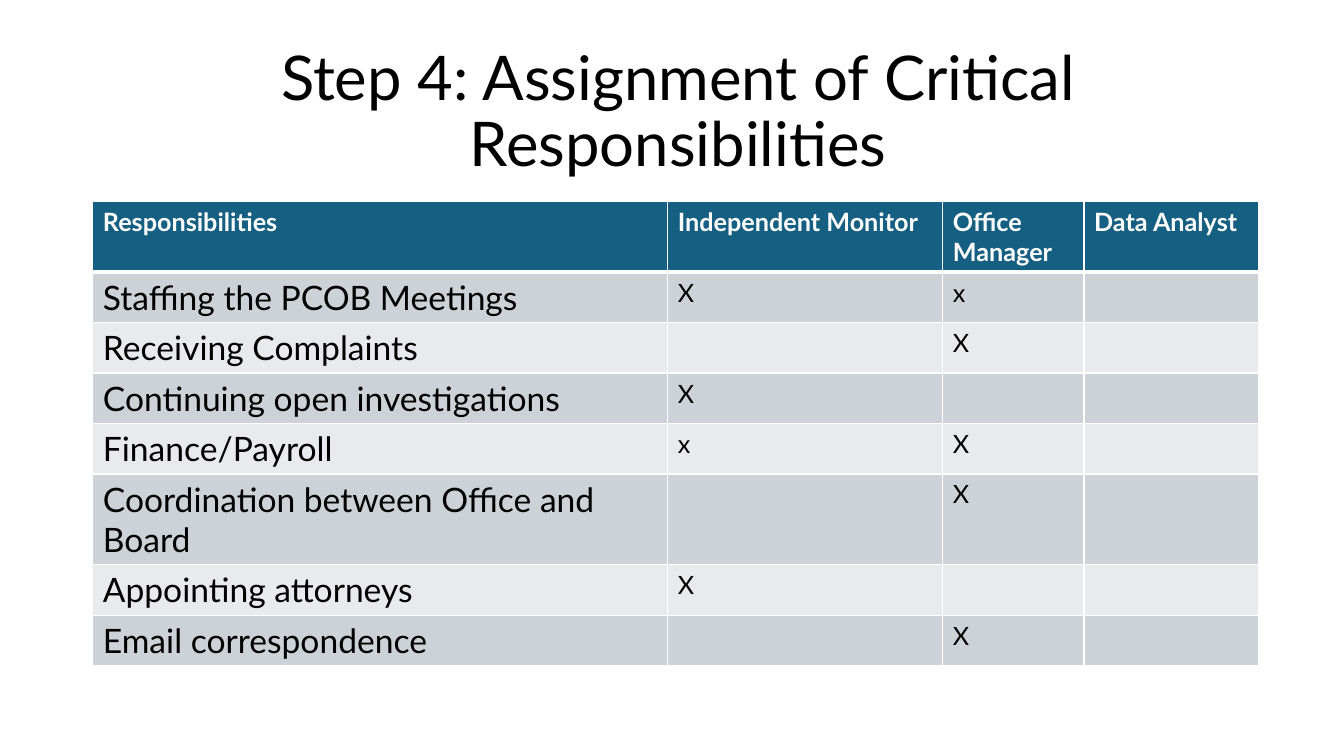
import dataclasses

import pptx
import pptx.dml.color
import pptx.enum.text
import pptx.oxml
import pptx.oxml.ns
import pptx.util

Cm = pptx.util.Cm
Pt = pptx.util.Pt
RGB = pptx.dml.color.RGBColor.from_string


@dataclasses.dataclass(frozen=True)
class Theme:
    font: str = "Lato"
    ink: str = "000000"
    white: str = "FFFFFF"
    head: str = "156082"
    bands: tuple = ("CCD2D8", "E8EAED")
    title: int = 44
    task: int = 24
    mark: int = 18


THEME = Theme()

ROLES = ("Responsibilities", "Independent Monitor", "Office Manager", "Data Analyst")
TASKS = (
    ("Staffing the PCOB Meetings", "X", "x", ""),
    ("Receiving Complaints", "", "X", ""),
    ("Continuing open investigations", "X", "", ""),
    ("Finance/Payroll", "x", "X", ""),
    ("Coordination between Office and Board", "", "X", ""),
    ("Appointing attorneys", "X", "", ""),
    ("Email correspondence", "", "X", ""),
)
WIDTHS = (14.49, 6.93, 3.56, 4.39)
ROW = 1.04


def style(para, size, color, bold=False):
    for font in [para.font] + [run.font for run in para.runs]:
        font.name = THEME.font
        font.size = Pt(size)
        font.bold = bold
        font.color.rgb = RGB(color)


def edge(cell, base):
    """Draw white lines on all four sides, the bottom one base points wide."""
    props = cell._tc.get_or_add_tcPr()
    for i, (side, width) in enumerate(zip("LRTB", (1, 1, 1, base))):
        line = pptx.oxml.parse_xml(
            f'<a:ln{side} {pptx.oxml.ns.nsdecls("a")} w="{Pt(width)}">'
            f'<a:solidFill><a:srgbClr val="{THEME.white}"/></a:solidFill></a:ln{side}>'
        )
        props.insert(i, line)


def add_title(slide, text, left, top, width, height):
    box = slide.shapes.add_textbox(Cm(left), Cm(top), Cm(width), Cm(height))
    frame = box.text_frame
    frame.word_wrap = True
    frame.vertical_anchor = pptx.enum.text.MSO_ANCHOR.MIDDLE
    frame.text = text
    para = frame.paragraphs[0]
    para.alignment = pptx.enum.text.PP_ALIGN.CENTER
    para.line_spacing = 0.9
    style(para, THEME.title, THEME.ink)


def fill_cell(cell, text, row, col):
    head = row == 0
    cell.text = text
    size = THEME.mark if head or col else THEME.task
    style(cell.text_frame.paragraphs[0], size, THEME.white if head else THEME.ink, head)
    cell.fill.solid()
    cell.fill.fore_color.rgb = RGB(THEME.head if head else THEME.bands[(row - 1) % 2])
    edge(cell, 3 if row < 2 and head else 1)


def add_grid(slide, left, top, width):
    rows = (ROLES,) + TASKS
    frame = slide.shapes.add_table(
        len(rows), len(ROLES), Cm(left), Cm(top), Cm(width), Cm(ROW * len(rows))
    )
    grid = frame.table
    for col, share in zip(grid.columns, WIDTHS):
        col.width = Cm(width * share / sum(WIDTHS))
    for r, texts in enumerate(rows):
        grid.rows[r].height = Cm(ROW)
        for c, text in enumerate(texts):
            fill_cell(grid.cell(r, c), text, r, c)


def main():
    deck = pptx.Presentation()
    deck.slide_width, deck.slide_height = Cm(33.87), Cm(19.05)
    slide = deck.slides.add_slide(deck.slide_layouts[6])
    add_title(slide, "Step 4: Assignment of Critical Responsibilities", 2.34, 1.02, 29.51, 3.68)
    add_grid(slide, 2.34, 5.08, 29.37)
    deck.save("out.pptx")


if __name__ == "__main__":
    main()
